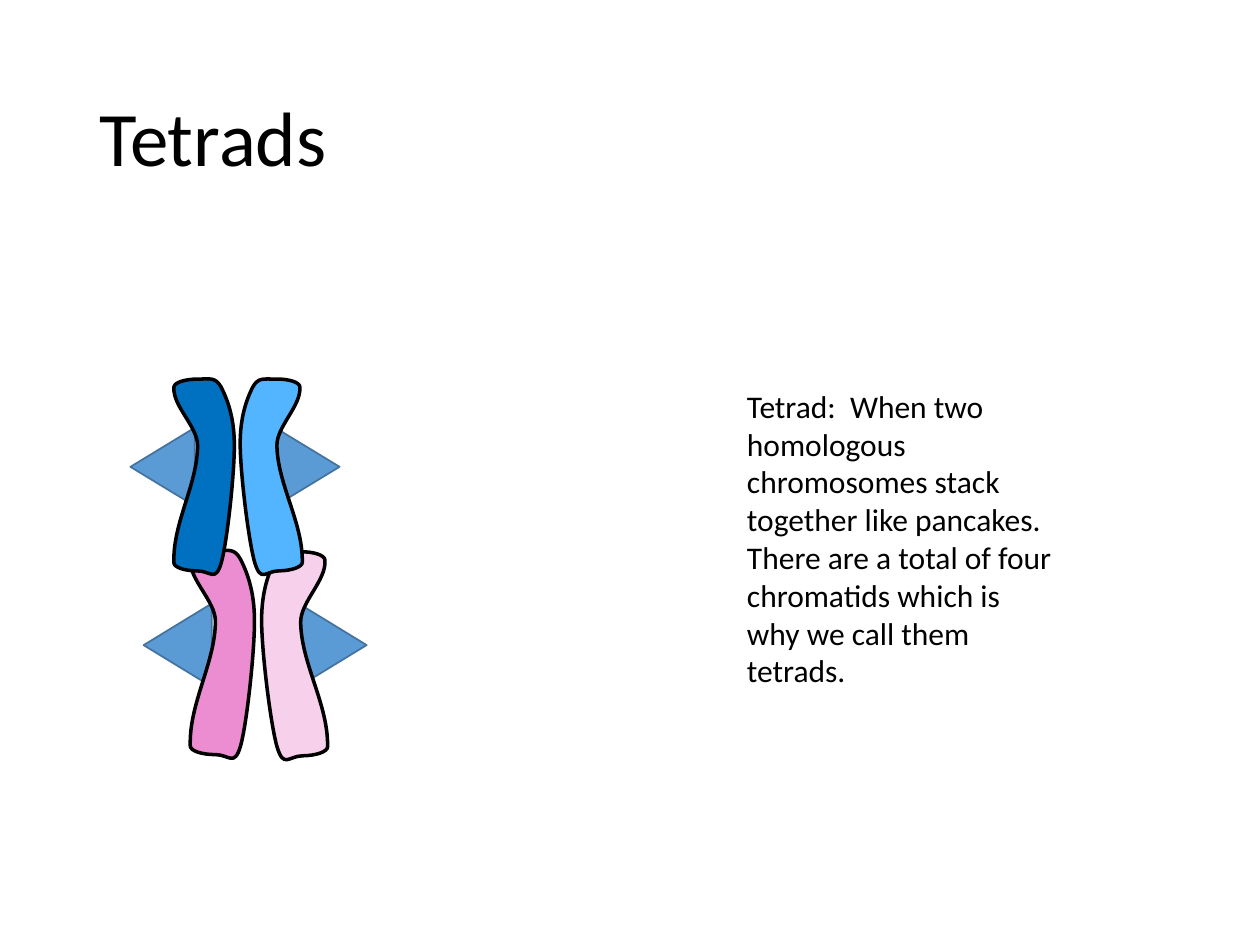
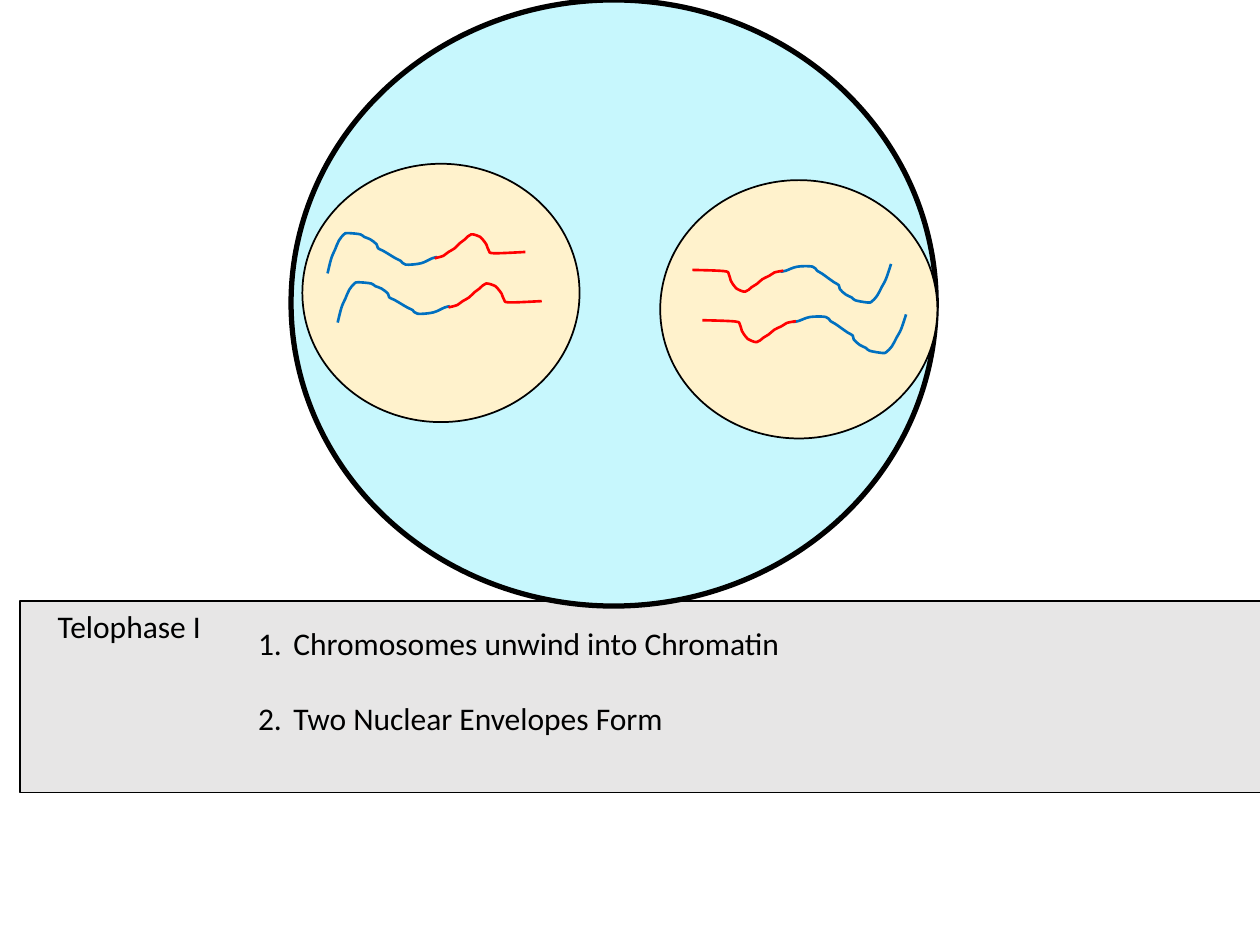
from lxml import etree
from pptx import Presentation
from pptx.dml.color import RGBColor as Rgb
from pptx.enum.shapes import MSO_SHAPE as Kind
from pptx.enum.text import MSO_ANCHOR as Anchor, MSO_AUTO_SIZE as Fit
from pptx.oxml.ns import qn
from pptx.util import Inches, Pt

# Colours
BLACK = Rgb(0x00, 0x00, 0x00)
GREY = Rgb(0xE7, 0xE6, 0xE6)
BLUE = Rgb(0x00, 0x70, 0xC0)
SKY = Rgb(0x53, 0xB5, 0xFF)
PINK = Rgb(0xEB, 0x8D, 0xD0)
ROSE = Rgb(0xF7, 0xD1, 0xEC)
RED = Rgb(0xFF, 0x00, 0x00)
CELL = Rgb(0xC7, 0xF7, 0xFD)
CREAM = Rgb(0xFF, 0xF2, 0xCC)
STEEL = Rgb(0x5B, 0x9B, 0xD5)
EDGE = Rgb(0x43, 0x73, 0x9E)

# Text formats
BODY = {"name": "Calibri", "size": Pt(18)}
TITLE = {"name": "Calibri", "size": Pt(44)}

# Chromatid outline: grid size, start point, Bezier curves
BODY_GRID = (51, 166)
START = (0, 8)
CURVES = [
    ((0, 4), (9, 1), (20, 1)),
    ((31, 1), (35, -1), (40, 8)),
    ((45, 18), (51, 33), (51, 57)),
    ((51, 82), (45, 138), (40, 156)),
    ((35, 173), (31, 163), (20, 163)),
    ((9, 163), (0, 160), (0, 156)),
    ((-1, 122), (20, 90), (20, 57)),
    ((20, 41), (-1, 24), (0, 8)),
]

# Chromatin threads: grid size and the points they run through
LONG_GRID = (87, 32)
LONG = [(0, 32), (3, 20), (6, 13), (9, 6), (13, 1), (16, 0), (26, 1),
        (29, 3), (34, 5), (39, 9), (40, 12), (44, 14), (49, 17), (54, 20),
        (58, 22), (62, 25), (74, 24), (83, 20), (87, 19)]
SHORT_GRID = (72, 19)
SHORT = [(0, 19), (7, 17), (11, 14), (16, 11), (20, 7), (24, 4), (29, 0),
         (36, 2), (38, 4), (41, 8), (43, 13), (47, 15), (72, 14)]


def paint(shape, fill, line, width):
    """Set fill and outline; a fill of None leaves the shape open."""
    shape.shadow.inherit = False
    if fill is None:
        shape.fill.background()
    else:
        shape.fill.solid()
        shape.fill.fore_color.rgb = fill
    shape.line.color.rgb = line
    shape.line.width = Pt(width)


def add_form(shapes, kind, box, fill, line=BLACK, width=1, turn=0):
    shape = shapes.add_shape(kind, *map(Inches, box))
    shape.rotation = turn
    paint(shape, fill, line, width)


def add_curve(shapes, box, grid, start, curves, fill, line, width, turn=0):
    """Draw Bezier curves, given on a grid that is stretched to the box."""
    left, top, wide, high = map(Inches, box)
    pen = shapes.build_freeform(left, top)
    pen.add_line_segments([(left + wide, top + high)], close=False)
    shape = pen.convert_to_shape()
    route = shape._element.find(".//" + qn("a:path"))
    for child in list(route):
        route.remove(child)
    for key, size in zip("wh", grid):
        route.set(key, str(size * 100))
    for tag, dots in [("moveTo", [start])] + [("cubicBezTo", c) for c in curves]:
        part = etree.SubElement(route, qn("a:" + tag))
        for x, y in dots:
            etree.SubElement(part, qn("a:pt"),
                             x=str(round(x * 100)), y=str(round(y * 100)))
    if fill is not None:
        etree.SubElement(route, qn("a:close"))
    shape.rotation = turn
    paint(shape, fill, line, width)


def add_text(slide, box, lines, style=BODY, anchor=Anchor.TOP,
             fit=Fit.SHAPE_TO_FIT_TEXT):
    frame = slide.shapes.add_textbox(*map(Inches, box)).text_frame
    form = {"word_wrap": True, "auto_size": fit, "vertical_anchor": anchor}
    for key, value in form.items():
        setattr(frame, key, value)
    frame.text = "\n".join(lines)
    for par in frame.paragraphs:
        for key, value in style.items():
            setattr(par.font, key, value)
        par.font.color.rgb = BLACK
    return frame


def number(frame, indent, gap):
    """Turn the paragraphs into a numbered list."""
    for par in frame.paragraphs:
        par.space_after = Pt(gap)
        props = par._p.get_or_add_pPr()
        props.set("marL", str(Inches(indent)))
        props.set("indent", str(-Inches(indent)))
        etree.SubElement(props, qn("a:buAutoNum"), type="arabicPeriod")


def smooth(dots):
    """Bezier curves that run smoothly through all points."""
    ends = [dots[0], *dots, dots[-1]]
    return [((b[0] + (c[0] - a[0]) / 6, b[1] + (c[1] - a[1]) / 6),
             (c[0] - (d[0] - b[0]) / 6, c[1] - (d[1] - b[1]) / 6), c)
            for a, b, c, d in zip(ends, ends[1:], ends[2:], ends[3:])]


def flip(dots):
    return [(BODY_GRID[0] - x, y) for x, y in dots]


def add_pair(slide, left, right, size, fills, wings):
    """Two sister chromatids with a triangle on each outer side."""
    shapes = slide.shapes.add_group_shape().shapes
    xs, y, wide, high = wings
    for x, turn in zip(xs, (270, 90)):
        add_form(shapes, Kind.ISOSCELES_TRIANGLE, (x, y, wide, high),
                 STEEL, EDGE, 1, turn)
    add_curve(shapes, right + size, BODY_GRID, flip([START])[0],
              map(flip, CURVES), fills[1], BLACK, 2, -0.8)
    add_curve(shapes, left + size, BODY_GRID, START, CURVES,
              fills[0], BLACK, 2)


def add_thread(slide, blue, red, turn):
    """A chromatin thread: a long blue part and a short red part."""
    shapes = slide.shapes.add_group_shape().shapes
    for box, grid, dots, tint in ((blue, LONG_GRID, LONG, BLUE),
                                  (red, SHORT_GRID, SHORT, RED)):
        add_curve(shapes, box, grid, dots[0], smooth(dots),
                  None, tint, 1.5, turn)


def tetrads(deck):
    slide = deck.slides.add_slide(deck.slide_layouts[6])
    add_pair(slide, (1.51, 4.36), (2.08, 4.37), (0.51, 1.66), (PINK, ROSE),
             ((1.08, 2.31), 4.85, 0.66, 0.54))
    title = add_text(slide, (0.69, 0.4, 8.62, 1.45), ["Tetrads"], TITLE,
                     Anchor.MIDDLE, Fit.NONE)
    title.paragraphs[0].line_spacing = 0.9
    add_pair(slide, (1.38, 3), (1.91, 3), (0.48, 1.56), (BLUE, SKY),
             ((0.98, 2.13), 3.45, 0.62, 0.51))
    add_text(slide, (5.83, 3.02, 2.62, 2.52), [
        "Tetrad:  When two homologous chromosomes stack together like "
        "pancakes.  There are a total of four chromatids which is why we "
        "call them tetrads."])


def telophase(deck):
    slide = deck.slides.add_slide(deck.slide_layouts[6])
    # Caption band
    add_form(slide.shapes, Kind.RECTANGLE, (0.16, 4.77, 9.88, 1.52), GREY)
    steps = add_text(slide, (1.95, 4.9, 6.2, 2.22), [
        "Chromosomes unwind into Chromatin", "Two Nuclear Envelopes Form"])
    number(steps, 0.28, 21.5)
    add_text(slide, (0.36, 4.77, 1.59, 0.4), ["Telophase I"])
    # Cell with two nuclei
    add_form(slide.shapes, Kind.OVAL, (2.31, 0, 5.12, 4.81), CELL, width=3)
    for left, top in ((5.24, 1.43), (2.4, 1.3)):
        add_form(slide.shapes, Kind.OVAL, (left, top, 2.2, 2.05), CREAM)
    # Chromatin: upper and lower thread in each nucleus
    for blue, red, turn in (((2.6, 1.85), (3.45, 1.86), 0),
                            ((2.68, 2.24), (3.56, 2.25), 0),
                            ((6.19, 2.06), (5.49, 2.12), 184.5),
                            ((6.29, 2.46), (5.57, 2.52), 184.5)):
        lower = blue[1] > 2.2
        add_thread(slide, blue + (0.89 if lower else 0.87, 0.32),
                   red + (0.74 if lower else 0.72, 0.19), turn)


def main():
    deck = Presentation()
    deck.slide_width, deck.slide_height = Inches(10), Inches(7.5)
    tetrads(deck)
    telophase(deck)
    deck.save("out.pptx")


if __name__ == "__main__":
    main()
